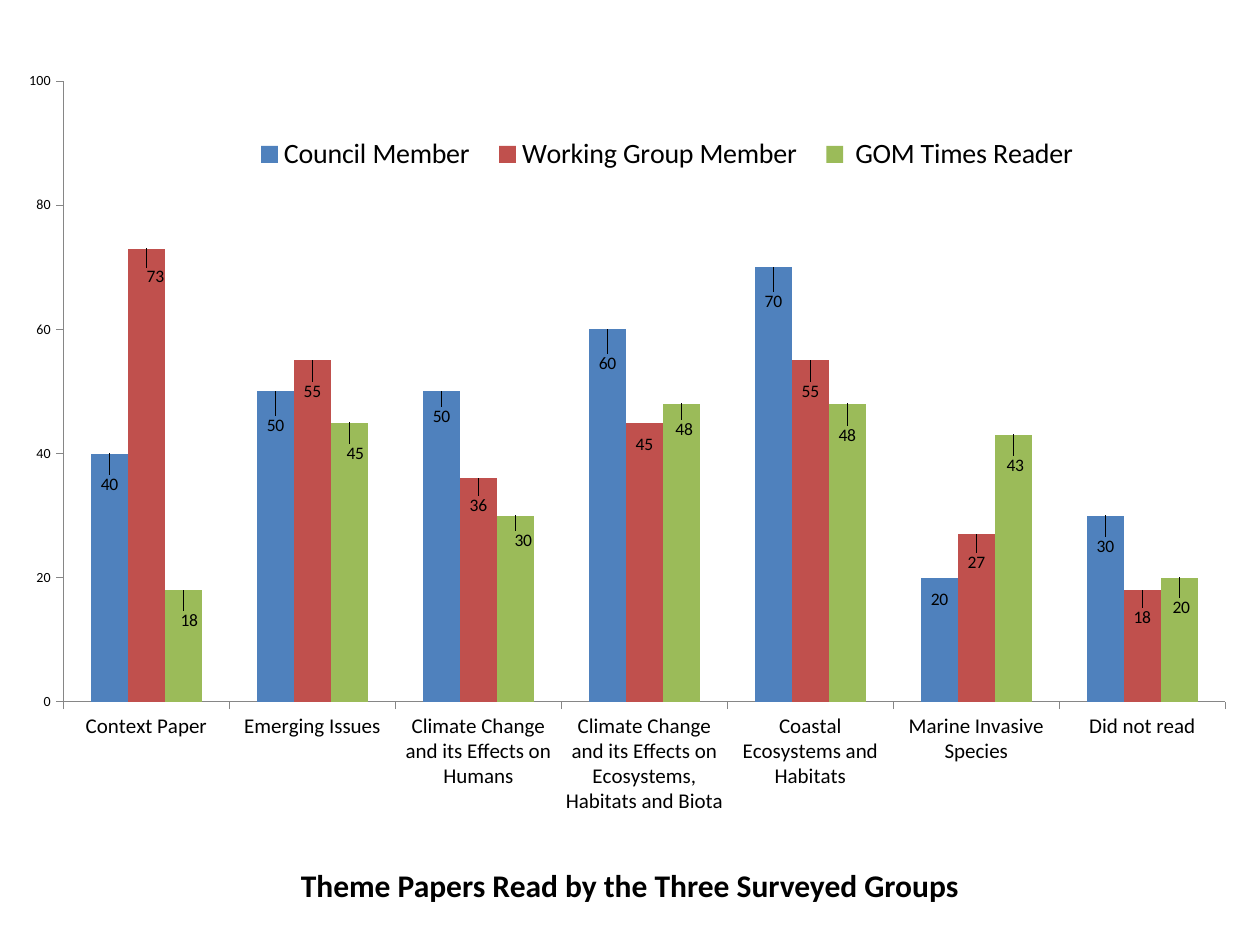
from dataclasses import dataclass

from lxml import etree
from pptx import Presentation
from pptx.chart.data import CategoryChartData
from pptx.dml.color import RGBColor
from pptx.enum.chart import XL_CHART_TYPE, XL_LABEL_POSITION, XL_LEGEND_POSITION, XL_TICK_MARK
from pptx.enum.text import MSO_ANCHOR, PP_ALIGN
from pptx.oxml.ns import qn
from pptx.util import Emu, Pt

PIXEL = 914400 // 126
FONT = "Calibri"
BLACK = "000000"
AXIS_GRAY = "868686"
CLUSTERED = XL_CHART_TYPE.COLUMN_CLUSTERED
OUTSIDE_END = XL_LABEL_POSITION.OUTSIDE_END
BOTTOM = XL_LEGEND_POSITION.BOTTOM
TICK_OUTSIDE = XL_TICK_MARK.OUTSIDE
CENTER = PP_ALIGN.CENTER
MIDDLE = MSO_ANCHOR.MIDDLE
CHART_WIDTH, CHART_HEIGHT = 1201, 804
LABEL_RISE = 13


@dataclass
class Group:
    name: str
    color: str
    values: list[int]
    label_shifts: list[int]
    label_drops: list[int]


CATEGORIES = [
    "Context Paper",
    "Emerging Issues",
    "Climate Change and its Effects on Humans",
    "Climate Change and its Effects on Ecosystems, Habitats and Biota",
    "Coastal Ecosystems and Habitats",
    "Marine Invasive Species",
    "Did not read",
]
GROUPS = [
    Group("Council Member", "4F81BD", [40, 50, 50, 60, 70, 20, 30],
          [0, 0, 0, 0, 0, 0, 0], [33, 36, 27, 36, 36, 24, 33]),
    Group("Working Group Member", "C0504D", [73, 55, 36, 45, 55, 27, 18],
          [9, 0, 0, 0, 0, 0, 0], [30, 33, 29, 24, 33, 30, 29]),
    Group(" GOM Times Reader", "9BBB59", [18, 45, 30, 48, 48, 43, 20],
          [6, 6, 8, 3, 0, 2, 2], [32, 33, 27, 27, 33, 32, 32]),
]


def px(length: int) -> Emu:
    return Emu(length * PIXEL)


def color(value: str) -> RGBColor:
    return RGBColor.from_string(value)


def format_font(font, size: int, bold: bool = False) -> None:
    font.name = FONT
    font.size = Pt(size)
    font.bold = bold
    font.color.rgb = color(BLACK)


def set_layout(parent, index: int, **settings) -> None:
    for previous in parent.findall(qn("c:layout")):
        parent.remove(previous)
    layout = etree.Element(qn("c:layout"))
    manual = etree.SubElement(layout, qn("c:manualLayout"))
    for name, value in settings.items():
        etree.SubElement(manual, qn(f"c:{name}")).set("val", str(value))
    parent.insert(index, layout)


def format_axis(axis, size: int) -> None:
    axis.has_major_gridlines = False
    axis.major_tick_mark = TICK_OUTSIDE
    axis.format.line.color.rgb = color(AXIS_GRAY)
    axis.format.line.width = Pt(0.75)
    format_font(axis.tick_labels.font, size)


def format_series(series, group: Group) -> None:
    series.format.fill.solid()
    series.format.fill.fore_color.rgb = color(group.color)
    series.invert_if_negative = False
    for index in range(len(group.values)):
        label = series.points[index].data_label
        label.position = OUTSIDE_END
        format_font(label.font, 10)
    labels = series.data_labels
    labels.show_value = True
    labels.position = OUTSIDE_END
    format_font(labels.font, 10)
    elements = labels._element.findall(qn("c:dLbl"))
    for element, shift, drop in zip(elements, group.label_shifts, group.label_drops):
        set_layout(element, 1, x=round(shift / CHART_WIDTH, 4),
                   y=round((drop + LABEL_RISE) / CHART_HEIGHT, 4))


def add_survey_chart(slide) -> None:
    data = CategoryChartData(number_format="0")
    data.categories = CATEGORIES
    for group in GROUPS:
        data.add_series(group.name, group.values)
    frame = slide.shapes.add_chart(
        CLUSTERED, px(25), px(66), px(CHART_WIDTH), px(CHART_HEIGHT), data)
    chart = frame.chart
    chart.has_title = False
    format_font(chart.font, 10)
    plot = chart.plots[0]
    plot.gap_width = 150
    plot.overlap = 0
    plot.vary_by_categories = False
    for series, group in zip(plot.series, GROUPS):
        format_series(series, group)

    format_axis(chart.category_axis, 12)
    format_axis(chart.value_axis, 8)
    chart.value_axis.minimum_scale = 0
    chart.value_axis.maximum_scale = 100
    chart.value_axis.major_unit = 20
    chart.value_axis.tick_labels.number_format = "0"
    chart.value_axis.tick_labels.number_format_is_linked = False

    chart.has_legend = True
    legend = chart.legend
    legend.position = BOTTOM
    legend.include_in_layout = False
    format_font(legend.font, 16)
    set_layout(legend._element, 1, xMode="edge", yMode="edge",
               x=0.18, y=0.08, w=0.71, h=0.06)
    set_layout(chart._chartSpace.chart.plotArea, 0, layoutTarget="inner",
               xMode="edge", yMode="edge", x=0.032, y=0.019, w=0.968, h=0.772)


def set_title(slide, text: str, size: int, bold: bool) -> None:
    title = slide.shapes.title
    title.left, title.top, title.width, title.height = px(-5), px(859), px(1270), px(51)
    frame = title.text_frame
    frame.word_wrap = True
    frame.vertical_anchor = MIDDLE
    paragraph = frame.paragraphs[0]
    paragraph.alignment = CENTER
    run = paragraph.add_run()
    run.text = text
    format_font(run.font, size, bold)


def main() -> None:
    presentation = Presentation()
    presentation.slide_width = px(1260)
    presentation.slide_height = px(945)
    slide = presentation.slides.add_slide(presentation.slide_layouts[5])
    add_survey_chart(slide)
    set_title(slide, "Theme Papers Read by the Three Surveyed Groups", size=18, bold=True)
    presentation.save("out.pptx")


if __name__ == "__main__":
    main()
